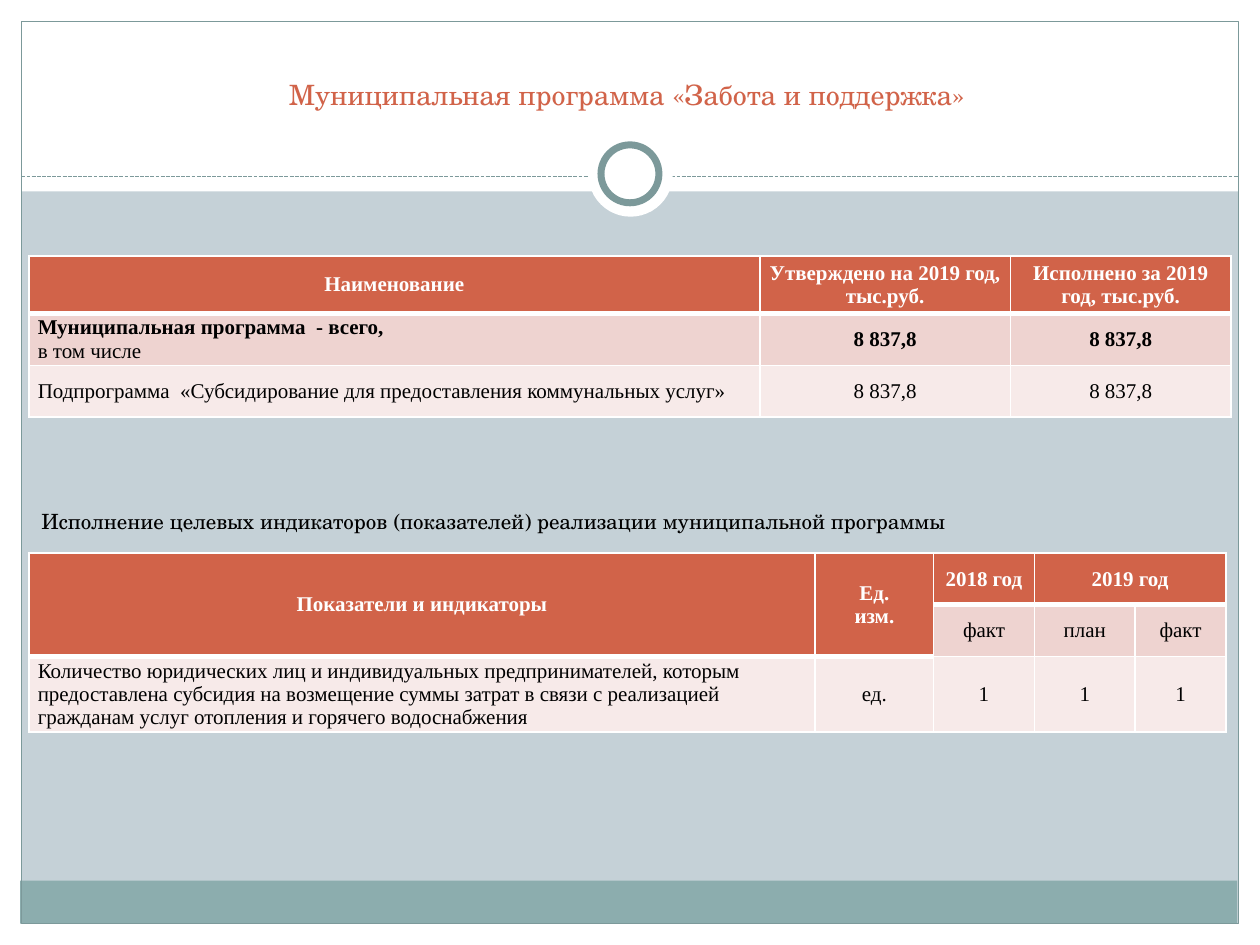
from lxml import etree
from pptx import Presentation
from pptx.dml.color import RGBColor
from pptx.enum import dml, shapes, text
from pptx.oxml import ns
from pptx.util import Inches, Pt

HUE = {"back": "C5D1D7", "white": "FFFFFF", "black": "000000", "teal": "7C999A",
       "foot": "8CADAE", "head": "D16349", "pink": "EED3D0", "pale": "F7EAE9"}
SERIF, SCHOOL = "Times New Roman", "TeX Gyre Schola"
MID = text.PP_ALIGN.CENTER
LEFT = text.PP_ALIGN.LEFT
JUST = text.PP_ALIGN.JUSTIFY


def rgb(name):
    return RGBColor.from_string(HUE[name])


def add_run(para, words, face, size, hue, bold=False):
    run = para.add_run()
    run.text = words
    run.font.name = face
    run.font.size = Pt(size)
    run.font.bold = bold
    run.font.color.rgb = rgb(hue)


prs = Presentation()
prs.slide_width, prs.slide_height = Inches(10), Inches(7.5)
slide = prs.slides.add_slide(prs.slide_layouts[5])
slide.background.fill.solid()
slide.background.fill.fore_color.rgb = rgb("back")

# Frame, bands and ring: kind, box, fill, line width
RECT, OVAL = shapes.MSO_SHAPE.RECTANGLE, shapes.MSO_SHAPE.OVAL
decor = [
    (RECT, (0, 7.33, 10, 0.17), "white", 0),
    (RECT, (0, 0, 10, 1.52), "white", 0),
    (RECT, (0, 0, 0.17, 7.5), "white", 0),
    (RECT, (9.83, 0, 0.17, 7.5), "white", 0),
    (RECT, (0.16, 6.99, 9.66, 0.34), "foot", 0),
    (RECT, (0.17, 0.17, 9.66, 7.16), None, 0.75),
    (None, (0.17, 1.4, 9.83, 1.4), None, 0.75),
    (OVAL, (4.67, 1.05, 0.67, 0.67), "white", 0),
    (OVAL, (4.77, 1.15, 0.46, 0.46), "white", 4),
]
for kind, box, fill, width in decor:
    box = [Inches(v) for v in box]
    if kind is None:
        item = slide.shapes.add_connector(shapes.MSO_CONNECTOR.STRAIGHT, *box)
        item.line.dash_style = dml.MSO_LINE.SQUARE_DOT
        etree.SubElement(item.element.spPr, ns.qn("a:effectLst"))
    else:
        item = slide.shapes.add_shape(kind, *box)
        item.shadow.inherit = False
        if fill:
            item.fill.solid()
            item.fill.fore_color.rgb = rgb(fill)
        else:
            item.fill.background()
    if width:
        item.line.color.rgb = rgb("teal")
        item.line.width = Pt(width)
    else:
        item.line.fill.background()

# Title, brought in front of the white band
title = slide.shapes.title
title.element.getparent().append(title.element)
title.left, title.top = Inches(0.31), Inches(0.44)
title.width, title.height = Inches(9.33), Inches(0.49)
frame = title.text_frame
frame.vertical_anchor = text.MSO_ANCHOR.BOTTOM
frame.auto_size = text.MSO_AUTO_SIZE.NONE
frame.paragraphs[0].alignment = MID
add_run(frame.paragraphs[0], "Муниципальная программа «Забота и поддержка»",
        SCHOOL, 16, "head")

# Caption of the second table
note = slide.shapes.add_textbox(Inches(0.23), Inches(3.99), Inches(9.3), Inches(0.39))
note.text_frame.word_wrap = True
para = note.text_frame.paragraphs[0]
para.space_before = Pt(2.4)
add_run(para, "Исполнение целевых индикаторов (показателей) реализации "
        "муниципальной программы", SCHOOL, 12, "black")

# Tables: a star marks a bold line, None a cell covered by a merge
SUM = "8 837,8"
tables = [
    dict(top=2.03, cols=[5.8, 1.99, 1.75], rows=[0.46, 0.41, 0.41], side=JUST,
         merges=[], cells=[
             ["*Наименование", "*Утверждено на 2019 год, тыс.руб.",
              "*Исполнено за 2019 год, тыс.руб."],
             ["*Муниципальная программа  - всего,\nв том числе", "*" + SUM, "*" + SUM],
             ["Подпрограмма  «Субсидирование для предоставления коммунальных услуг»",
              SUM, SUM]]),
    dict(top=4.39, cols=[6.24, 0.94, 0.8, 0.8, 0.72], rows=[0.41, 0.41, 0.56], side=LEFT,
         merges=[(0, 0, 1, 0), (0, 1, 1, 1), (0, 3, 0, 4)], cells=[
             ["*Показатели и индикаторы", "*Ед.\n*изм.", "*2018 год", "*2019 год", None],
             [None, None, "факт", "план", "факт"],
             ["Количество юридических лиц и индивидуальных предпринимателей, которым "
              "предоставлена субсидия на возмещение суммы затрат в связи с реализацией "
              "гражданам услуг отопления и горячего водоснабжения",
              "ед.", "1", "1", "1"]]),
]
for spec_ in tables:
    cols, rows = spec_["cols"], spec_["rows"]
    grid = slide.shapes.add_table(len(rows), len(cols), Inches(0.23), Inches(spec_["top"]),
                                  Inches(sum(cols)), Inches(sum(rows))).table
    for col, size in zip(grid.columns, cols):
        col.width = Inches(size)
    for row, size in zip(grid.rows, rows):
        row.height = Inches(size)
    for r, line in enumerate(spec_["cells"]):
        for c, words in enumerate(line):
            cell = grid.cell(r, c)
            head = r == 0 or words is None
            cell.margin_left = cell.margin_right = Inches(0.07)
            cell.margin_top = cell.margin_bottom = 0
            cell.vertical_anchor = text.MSO_ANCHOR.MIDDLE
            # Borders come before the fill in the cell properties
            props = cell._tc.get_or_add_tcPr()
            for edge in "LRTB":
                wide = 3 if head and edge == "B" else 1
                ln = etree.SubElement(props, ns.qn("a:ln" + edge), w=str(Pt(wide)))
                ink = etree.SubElement(ln, ns.qn("a:solidFill"))
                etree.SubElement(ink, ns.qn("a:srgbClr"), val=HUE["white"])
            cell.fill.solid()
            cell.fill.fore_color.rgb = rgb("head" if head else ("pink", "pale")[r - 1])
            if words is None:
                continue
            for n, part in enumerate(words.split("\n")):
                body = cell.text_frame
                para = body.add_paragraph() if n else body.paragraphs[0]
                para.alignment = spec_["side"] if c == 0 and r else MID
                add_run(para, part.lstrip("*"), SERIF, 12,
                        "white" if head else "black", part.startswith("*"))
    for r1, c1, r2, c2 in spec_["merges"]:
        grid.cell(r1, c1).merge(grid.cell(r2, c2))

prs.save("out.pptx")
